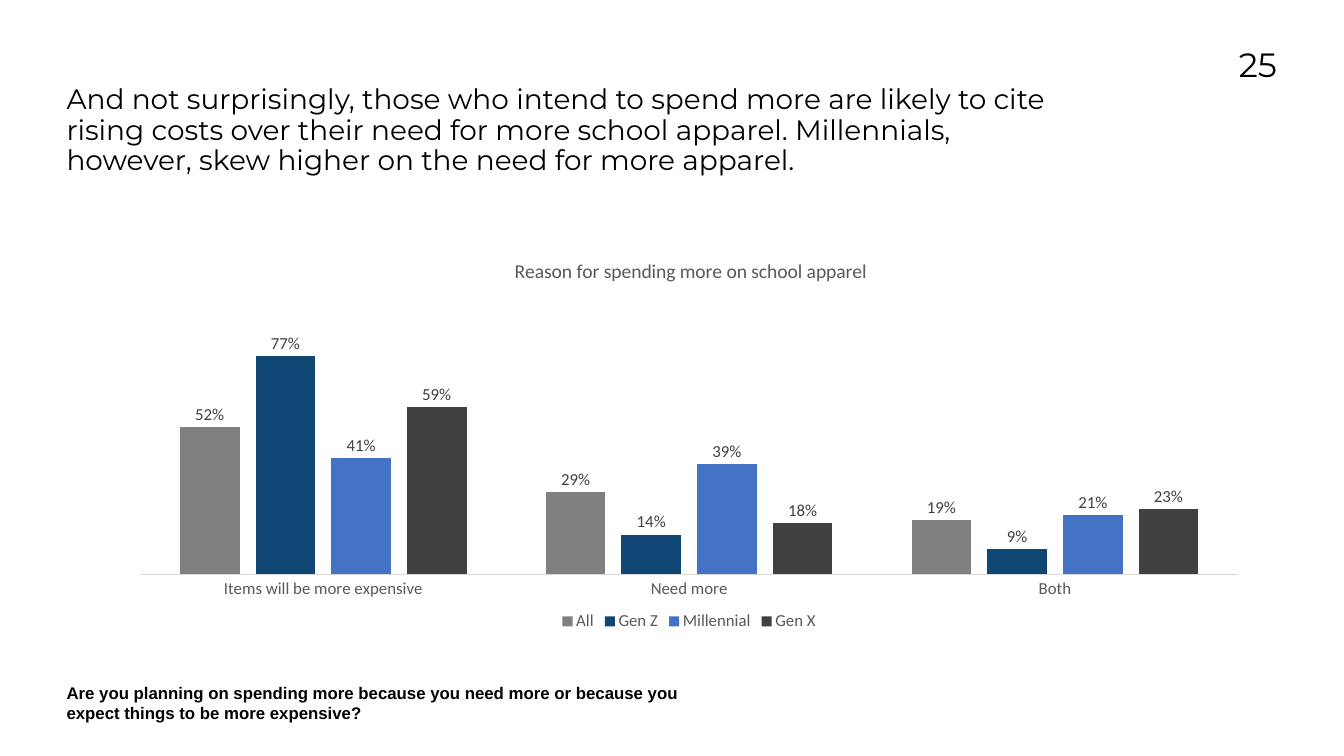
from lxml import etree
from pptx import Presentation
from pptx.chart.data import CategoryChartData
from pptx.dml.color import RGBColor
from pptx.enum.chart import XL_CHART_TYPE, XL_LABEL_POSITION, XL_LEGEND_POSITION, XL_TICK_LABEL_POSITION, XL_TICK_MARK
from pptx.enum.text import MSO_ANCHOR, PP_ALIGN
from pptx.oxml import parse_xml
from pptx.oxml.ns import nsdecls, qn
from pptx.util import Pt

PX = 9144  # 100 px to the inch

THEME = {
    "headline": {"name": "Montserrat", "size": Pt(40), "bold": False, "color": "000000"},
    "number": {"name": "Montserrat", "size": Pt(48), "bold": False, "color": "000000"},
    "question": {"name": "Arial", "size": Pt(24), "bold": True, "color": "000000"},
    "chart_title": {"name": "Calibri", "size": Pt(28), "bold": False, "color": "595959"},
    "axis": {"name": "Calibri", "size": Pt(24), "bold": False, "color": "595959"},
    "label": {"name": "Calibri", "size": Pt(24), "bold": False, "color": "404040"},
    "axis_line": "D9D9D9",
    "series": ["808080", "104674", "4472C4", "404040"],
}


def set_font(font, style):
    for key, value in THEME[style].items():
        if key == "color":
            font.color.rgb = RGBColor.from_string(value)
        else:
            setattr(font, key, value)


def set_layout(parent, after, **values):
    """Place a chart part by fractions of the chart area."""
    for old in parent.findall(qn("c:layout")):
        parent.remove(old)
    layout = parse_xml(f"<c:layout {nsdecls('c')}><c:manualLayout/></c:layout>")
    for tag, value in values.items():
        etree.SubElement(layout[0], qn(f"c:{tag}")).set("val", str(value))
    if after is None:
        parent.insert(0, layout)
    else:
        after.addnext(layout)


prs = Presentation()
prs.slide_width, prs.slide_height = 2667 * PX, 1500 * PX
s = prs.slides.add_slide(prs.slide_layouts[6])

# Headline, survey question and page number
texts = [
    ("And not surprisingly, those who intend to spend more are likely to cite rising costs over "
     "their need for more school apparel. Millennials, however, skew higher on the need for "
     "more apparel.", (132, 170, 1962, 208), "headline", PP_ALIGN.LEFT, 0.9),
    ("Are you planning on spending more because you need more or because you expect things to "
     "be more expensive?", (132, 1355, 1327, 65), "question", PP_ALIGN.LEFT, 1.0),
    ("25", (2309, 88, 225, 164), "number", PP_ALIGN.RIGHT, 1.0),
]
for text, box, style, align, spacing in texts:
    tf = s.shapes.add_textbox(*(v * PX for v in box)).text_frame
    frame = {"word_wrap": True, "vertical_anchor": MSO_ANCHOR.TOP, "margin_left": 0,
             "margin_top": 0, "margin_right": 0, "margin_bottom": 0}
    for key, value in frame.items():
        setattr(tf, key, value)
    p = tf.paragraphs[0]
    p.alignment, p.line_spacing = align, spacing
    r = p.add_run()
    r.text = text
    set_font(r.font, style)

# Chart data
data = CategoryChartData(number_format="0%")
data.categories = ["Items will be more expensive", "Need more", "Both"]
data.add_series("All", (0.52, 0.29, 0.19))
data.add_series("Gen Z", (0.77, 0.14, 0.09))
data.add_series("Millennial", (0.41, 0.39, 0.21))
data.add_series("Gen X", (0.59, 0.18, 0.23))
box = (263, 472, 2209, 788)
chart = s.shapes.add_chart(XL_CHART_TYPE.COLUMN_CLUSTERED, *(v * PX for v in box), data).chart
set_font(chart.font, "axis")

# Chart title and plot area
tf = chart.chart_title.text_frame
tf.text = "Reason for spending more on school apparel"
set_font(tf.paragraphs[0].runs[0].font, "chart_title")
title = chart.chart_title._element
set_layout(title, title.find(qn("c:tx")), xMode="edge", yMode="edge", x=0.34, y=0.04)
plot_area = chart.plots[0]._element.getparent()
set_layout(plot_area, None, layoutTarget="inner", xMode="edge", yMode="edge",
           x=0.007, y=0.134, w=0.986, h=0.713)

# Axes
axis = chart.value_axis
axis_format = {"visible": False, "minimum_scale": 0, "maximum_scale": 1,
               "has_major_gridlines": False}
for key, value in axis_format.items():
    setattr(axis, key, value)
axis = chart.category_axis
axis.major_tick_mark = axis.minor_tick_mark = XL_TICK_MARK.NONE
axis.tick_label_position = XL_TICK_LABEL_POSITION.LOW
axis.format.line.color.rgb = RGBColor.from_string(THEME["axis_line"])
axis.format.line.width = Pt(0.75)
set_font(axis.tick_labels.font, "axis")

# Legend
chart.has_legend = True
chart.legend.position = XL_LEGEND_POSITION.BOTTOM
chart.legend.include_in_layout = False
set_font(chart.legend.font, "axis")

# Columns and their labels
plot = chart.plots[0]
plot.gap_width, plot.overlap, plot.vary_by_categories = 133, -27, False
label_format = {"show_value": True, "position": XL_LABEL_POSITION.OUTSIDE_END,
                "number_format": "0%", "number_format_is_linked": False}
for series, color in zip(plot.series, THEME["series"]):
    series.format.fill.solid()
    series.format.fill.fore_color.rgb = RGBColor.from_string(color)
    for key, value in label_format.items():
        setattr(series.data_labels, key, value)
    set_font(series.data_labels.font, "label")

prs.save("out.pptx")
